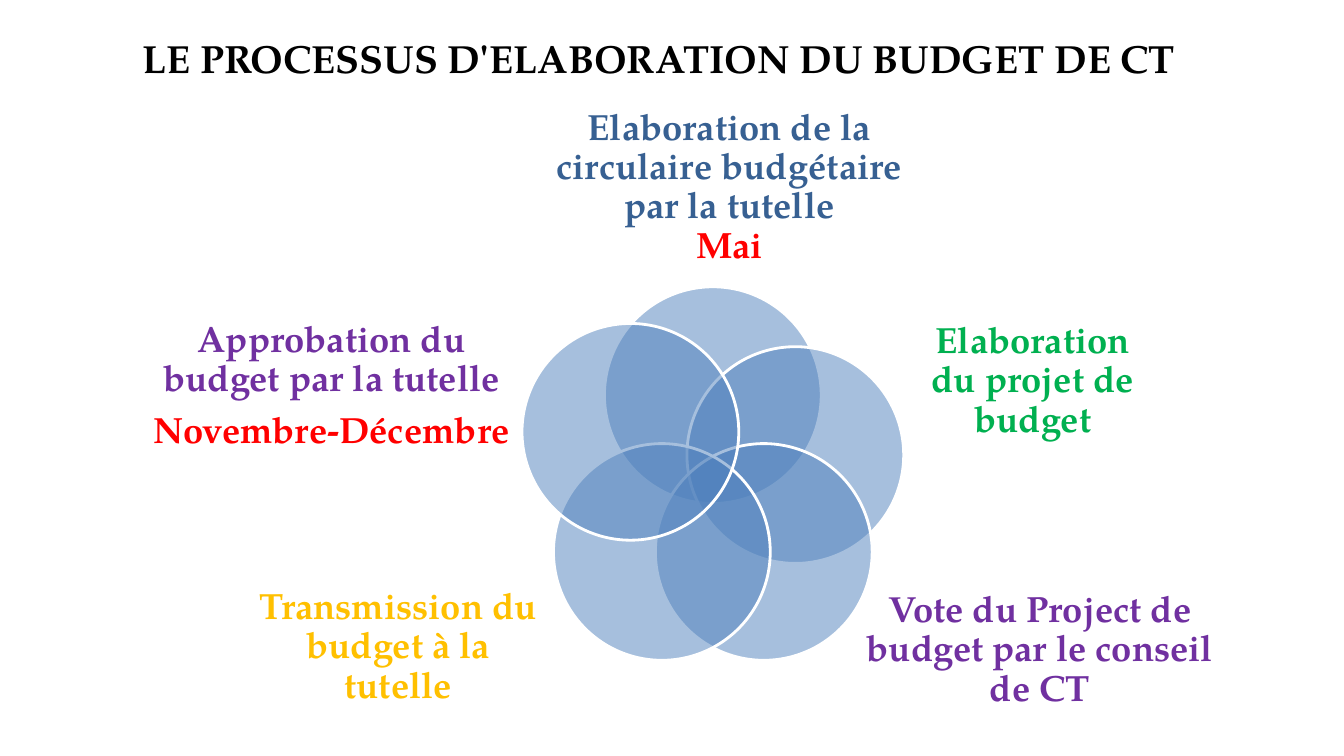
from math import cos, pi, sin

from lxml.etree import SubElement
from pptx import Presentation
from pptx.dml.color import RGBColor
from pptx.enum.shapes import MSO_SHAPE as SHAPE
from pptx.enum.text import MSO_ANCHOR as ANCHOR, PP_ALIGN as ALIGN
from pptx.oxml.ns import qn
from pptx.util import Inches, Pt

FONT = "TeX Gyre Pagella"
RED = "FF0000"
PURPLE = "7030A0"
TITLE = "LE PROCESSUS D'ELABORATION DU BUDGET DE CT"
TITLE_BOX = (0.72, 0.16, 11.63, 0.82)

STEPS = [
    {"box": (5.27, 1.14, 3.93, 1.44), "after": 0, "shift": 0,
     "lines": [("Elaboration de la circulaire budgétaire par la tutelle", "376092"),
               ("Mai", RED)]},
    {"box": (9.13, 3, 2.23, 1.56), "after": 9, "shift": 0,
     "lines": [("Elaboration du projet de budget", "00B050")]},
    {"box": (8.5, 5.37, 3.63, 2.16), "after": 9, "shift": 0,
     "lines": [("Vote du Project de budget par le conseil de CT", PURPLE)]},
    {"box": (2.5, 5.64, 2.9, 1.56), "after": 9, "shift": 0,
     "lines": [("Transmission du budget à la tutelle", "FFC000")]},
    {"box": (1.36, 3.05, 3.86, 1.56), "after": 9, "shift": -0.23,
     "lines": [("Approbation du budget par la tutelle", PURPLE),
               ("Novembre-Décembre", RED)]},
]

CENTER_X, CENTER_Y, RING = 7.07, 4.78, 0.86
DIAMETER = 2.15


def color(value):
    return RGBColor.from_string(value)


def add_text(s, box, lines, size, spacing=1.0, after=0):
    tf = s.shapes.add_textbox(*map(Inches, box)).text_frame
    tf.word_wrap = True
    tf.vertical_anchor = ANCHOR.MIDDLE
    tf.margin_left = tf.margin_right = tf.margin_top = tf.margin_bottom = 0
    for i, (text, ink) in enumerate(lines):
        p = tf.add_paragraph() if i else tf.paragraphs[0]
        p.alignment = ALIGN.CENTER
        p.line_spacing = spacing
        p.space_after = Pt(after)
        r = p.add_run()
        r.text = text
        r.font.name = FONT
        r.font.size = Pt(size)
        r.font.bold = True
        r.font.color.rgb = color(ink)


def add_circle(s, x, y):
    box = (x - DIAMETER / 2, y - DIAMETER / 2, DIAMETER, DIAMETER)
    sp = s.shapes.add_shape(SHAPE.OVAL, *map(Inches, box))
    sp.shadow.inherit = False
    sp.fill.solid()
    sp.fill.fore_color.rgb = color("4F81BD")
    fill = sp.fill._xPr.find(qn("a:solidFill"))
    SubElement(fill[0], qn("a:alpha"), val="50000")
    sp.line.color.rgb = color("FFFFFF")
    sp.line.width = Pt(2)


def main():
    prs = Presentation()
    prs.slide_width, prs.slide_height = Inches(13.33), Inches(7.5)
    s = prs.slides.add_slide(prs.slide_layouts[6])
    add_text(s, TITLE_BOX, [(TITLE, "000000")], 28)
    for i, step in enumerate(STEPS):
        angle = 2 * pi * i / len(STEPS)
        add_circle(s, CENTER_X + RING * sin(angle),
                   CENTER_Y - RING * cos(angle) + step["shift"])
        add_text(s, step["box"], step["lines"], 26, 0.9, step["after"])
    prs.save("out.pptx")


if __name__ == "__main__":
    main()
